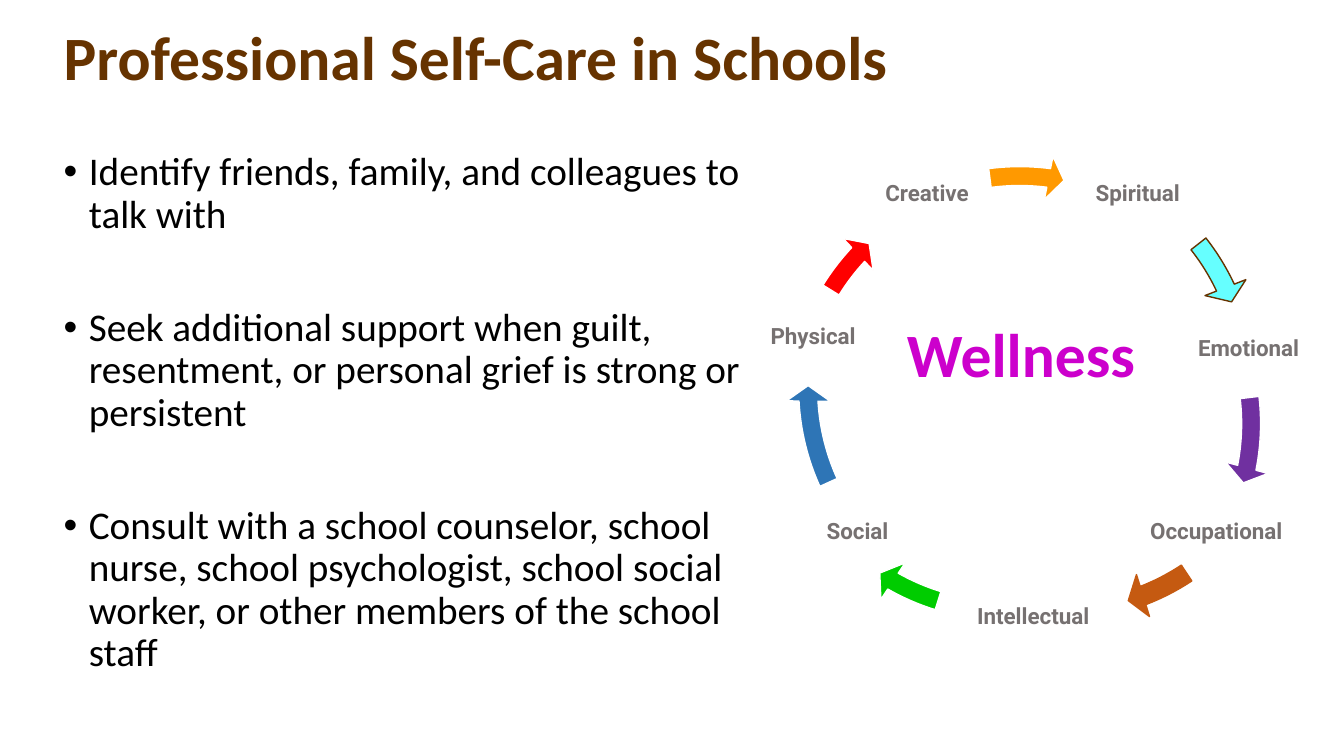
from lxml.etree import SubElement
from pptx import Presentation
from pptx.dml.color import RGBColor
from pptx.enum.shapes import MSO_SHAPE
from pptx.enum.text import MSO_ANCHOR, PP_ALIGN
from pptx.oxml import parse_xml
from pptx.oxml.ns import qn
from pptx.util import Inches, Pt

presentation = Presentation()
presentation.slide_width = Inches(13.33)
presentation.slide_height = Inches(7.5)
slide = presentation.slides.add_slide(presentation.slide_layouts[6])

# The grid has 40 columns; its cells are square.
CELL = presentation.slide_width / 40


def color(hex_text):
    return RGBColor.from_string(hex_text)


def add_text(box, paragraphs, font_name, size, hex_text, bold=True,
             anchor=MSO_ANCHOR.TOP, line_spacing=0.9, align=PP_ALIGN.LEFT):
    """Add a text box; box is left, top, width and height in grid cells."""
    shape = slide.shapes.add_textbox(*(int(length * CELL) for length in box))
    frame = shape.text_frame
    frame.word_wrap = True
    frame.vertical_anchor = anchor
    frame.text = "\n".join(paragraphs)
    font_format = {"name": font_name, "size": Pt(size), "bold": bold}
    for paragraph in frame.paragraphs:
        paragraph.line_spacing = line_spacing
        paragraph.alignment = align
        font = paragraph.runs[0].font
        for attribute, value in font_format.items():
            setattr(font, attribute, value)
        font.color.rgb = color(hex_text)
    return frame


add_text((1.6, -0.36, 34.5, 4.35), ["Professional Self-Care in Schools"],
         "Calibri", 44, "663300", anchor=MSO_ANCHOR.MIDDLE)

advice = [
    "Identify friends, family, and colleagues to talk with",
    "Seek additional support when guilt, resentment, or personal grief is strong or persistent",
    "Consult with a school counselor, school nurse, school psychologist, school social worker, "
    "or other members of the school staff",
]
advice_frame = add_text((1.6, 4.38, 21.93, 17.31), advice, "Calibri", 28, "000000", bold=False)
for index, paragraph in enumerate(advice_frame.paragraphs):
    paragraph.space_before = Pt(50.7 if index else 10)
    properties = paragraph._p.get_or_add_pPr()
    properties.set("marL", str(Inches(0.25)))
    properties.set("indent", str(-Inches(0.25)))
    SubElement(properties, qn("a:buFont"), typeface="Arial")
    SubElement(properties, qn("a:buChar"), char="•")

# Label, its centre, then the arrow that follows it:
# left and top, start and end angle in degrees, fill, line.
wellness_cycle = [
    ("Spiritual", (33.86, 5.79), (22.92, 4.02), (321.84, 334.81), "66FFFF", "663300"),
    ("Emotional", (37.16, 10.41), (23.04, 5.19), (353.38, 11.17), "7030A0", "FFFFFF"),
    ("Occupational", (36.2, 15.84), (24.15, 3.99), (56.47, 68.85), "C55A11", "C55A11"),
    ("Intellectual", (30.75, 18.39), (22.5, 3.99), (107.23, 119.61), "00CC00", "FFFFFF"),
    ("Social", (25.52, 15.84), (23.4, 4.14), (155.58, 176.8), "2E75B6", "FFFFFF"),
    ("Physical", (24.2, 10.05), (23.07, 4.77), (211.7, 222.99), "FF0000", "FFFFFF"),
    ("Creative", (27.59, 5.79), (22.92, 4.59), (262.51, 277.35), "FF9900", "FFFFFF"),
]
LABEL_WIDTH, LABEL_HEIGHT = 4.89, 2.88
RING_SIZE = 14.85
BAND, HEAD_ANGLE, HEAD = 0.038, 3.91, 0.044
DEGREE = 0.6  # one degree in the units of an adjustment

for label, (center_x, center_y), corner, (start, end), fill, line in wellness_cycle:
    label_box = (center_x - LABEL_WIDTH / 2, center_y - LABEL_HEIGHT / 2, LABEL_WIDTH, LABEL_HEIGHT)
    label_frame = add_text(label_box, [label], "Roboto", 16, "767171",
                           anchor=MSO_ANCHOR.MIDDLE, align=PP_ALIGN.CENTER)
    for side in ("left", "right", "top", "bottom"):
        setattr(label_frame, f"margin_{side}", Inches(0.02))

    arrow = slide.shapes.add_shape(
        MSO_SHAPE.CIRCULAR_ARROW,
        *(int(length * CELL) for length in (*corner, RING_SIZE, RING_SIZE)))
    arrow.shadow.inherit = False
    adjustments = (BAND, HEAD_ANGLE * DEGREE, end * DEGREE, start * DEGREE, HEAD)
    for index, value in enumerate(adjustments):
        arrow.adjustments[index] = value
    arrow.fill.solid()
    arrow.fill.fore_color.rgb = color(fill)
    arrow.line.color.rgb = color(line)
    arrow.line.width = Pt(1)

wellness_frame = add_text((26.7, 9.27, 8.7, 2.52), ["Wellness"], "Calibri", 44, "CC00CC",
                          line_spacing=1.0)
outline = parse_xml(
    '<a:ln xmlns:a="http://schemas.openxmlformats.org/drawingml/2006/main" '
    f'w="{Pt(1.75)}"><a:solidFill><a:srgbClr val="660066"/></a:solidFill></a:ln>')
wellness_frame.paragraphs[0].runs[0].font._element.insert(0, outline)

presentation.save("out.pptx")
